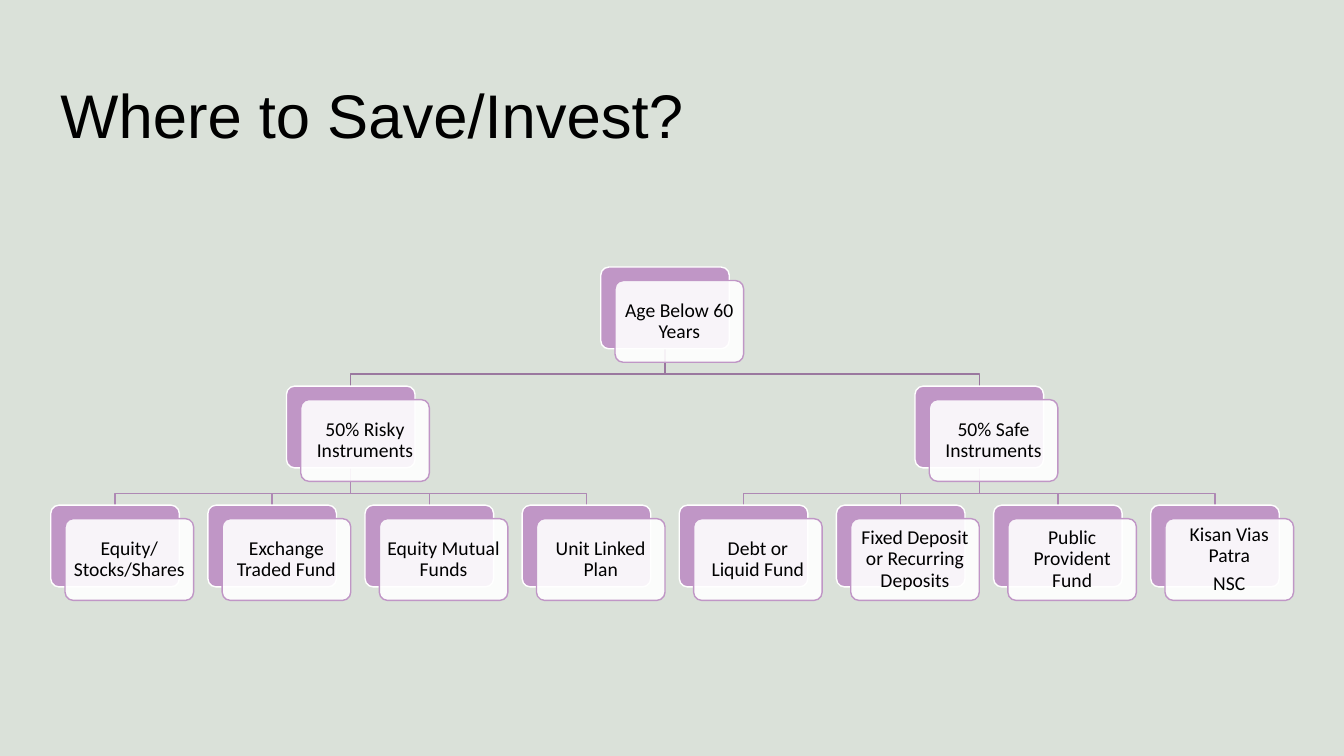
from lxml import etree
from pptx import Presentation
from pptx.dml.color import RGBColor
from pptx.enum.shapes import MSO_SHAPE
from pptx.enum.text import MSO_ANCHOR, PP_ALIGN
from pptx.oxml.ns import qn
from pptx.util import Cm, Pt

ROUNDED = MSO_SHAPE.ROUNDED_RECTANGLE
MIDDLE = MSO_ANCHOR.MIDDLE
LEFT, CENTER = PP_ALIGN.LEFT, PP_ALIGN.CENTER

TITLE = "Where to Save/Invest?"
ROOT = "Age Below 60 Years"
BRANCHES = [
    ("50% Risky Instruments", [
        "Equity/Stocks/Shares", "Exchange Traded Fund",
        "Equity Mutual Funds", "Unit Linked Plan"]),
    ("50% Safe Instruments", [
        "Debt or Liquid Fund", "Fixed Deposit or Recurring Deposits",
        "Public Provident Fund", "Kisan Vias Patra\nNSC"]),
]
COLORS = {
    "background": "DAE1D9", "text": "000000", "card": "FFFFFF",
    "lilac": "C096C6", "upper_line": "9A789F", "lower_line": "AE88B4",
}

CHART_LEFT, CHART_TOP = 1.28, 6.73
COLUMN_STEP, LEVEL_STEP = 3.96, 3.0
BOX_W, BOX_H = 3.24, 2.06
SHIFT_X, SHIFT_Y = 0.36, 0.34
BEND = 0.64
INSET = 0.14


def rgb(name):
    return RGBColor.from_string(COLORS[name])


def add_link(s, parent_x, child_x, level, color):
    center = BOX_W / 2
    top = CHART_TOP + level * LEVEL_STEP + BOX_H
    bottom = CHART_TOP + (level + 1) * LEVEL_STEP
    x1, x2 = Cm(parent_x + center), Cm(child_x + center)
    builder = s.shapes.build_freeform(x1, Cm(top))
    builder.add_line_segments(
        [(x1, Cm(top + BEND)), (x2, Cm(top + BEND)), (x2, Cm(bottom))],
        close=False)
    sp = builder.convert_to_shape()
    sp.shadow.inherit = False
    sp.fill.background()
    sp.line.color.rgb = rgb(color)
    sp.line.width = Pt(1)


def add_box(s, x, y, fill, line):
    sp = s.shapes.add_shape(ROUNDED, Cm(x), Cm(y), Cm(BOX_W), Cm(BOX_H))
    sp.adjustments[0] = 0.1
    sp.shadow.inherit = False
    sp.fill.solid()
    sp.fill.fore_color.rgb = rgb(fill)
    sp.line.color.rgb = rgb(line)
    sp.line.width = Pt(1)
    return sp


def add_node(s, text, x, level):
    y = CHART_TOP + level * LEVEL_STEP
    add_box(s, x, y, "lilac", "card")
    card = add_box(s, x + SHIFT_X, y + SHIFT_Y, "card", "lilac")
    color = card.fill._xPr.find(qn("a:solidFill"))[0]
    etree.SubElement(color, qn("a:alpha"), val="90000")
    tf = card.text_frame
    tf.word_wrap = True
    tf.vertical_anchor = MIDDLE
    tf.margin_left = tf.margin_right = Cm(INSET)
    tf.margin_top = tf.margin_bottom = Cm(INSET)
    tf.text = text
    for p in tf.paragraphs:
        p.alignment = CENTER
        p.line_spacing = 0.9
        p.space_after = Pt(5)
        p.font.name = "Calibri"
        p.font.size = Pt(14)
        p.font.color.rgb = rgb("text")


def add_title(s):
    title = s.shapes.title
    title.left, title.top = Cm(1.27), Cm(1.02)
    title.width, title.height = Cm(30.28), Cm(3.68)
    tf = title.text_frame
    tf.text = TITLE
    tf.word_wrap = True
    tf.vertical_anchor = MIDDLE
    p = tf.paragraphs[0]
    p.alignment = LEFT
    p.font.name = "Arial"
    p.font.size = Pt(44)
    p.font.color.rgb = rgb("text")


def add_tree(s):
    nodes, links, branch_xs = [], [], []
    column = 0
    for branch, leaves in BRANCHES:
        xs = [CHART_LEFT + (column + i) * COLUMN_STEP
              for i in range(len(leaves))]
        column += len(leaves)
        branch_x = sum(xs) / len(xs)
        branch_xs.append(branch_x)
        nodes.append((branch, branch_x, 1))
        nodes += [(leaf, x, 2) for leaf, x in zip(leaves, xs)]
        links += [(branch_x, x, 1, "lower_line") for x in xs]
    root_x = sum(branch_xs) / len(branch_xs)
    nodes.insert(0, (ROOT, root_x, 0))
    links += [(root_x, x, 0, "upper_line") for x in branch_xs]
    for link in links:
        add_link(s, *link)
    for node in nodes:
        add_node(s, *node)


def main():
    prs = Presentation()
    prs.slide_width, prs.slide_height = Cm(33.87), Cm(19.05)
    s = prs.slides.add_slide(prs.slide_layouts[5])
    s.background.fill.solid()
    s.background.fill.fore_color.rgb = rgb("background")
    add_title(s)
    add_tree(s)
    prs.save("out.pptx")


if __name__ == "__main__":
    main()
